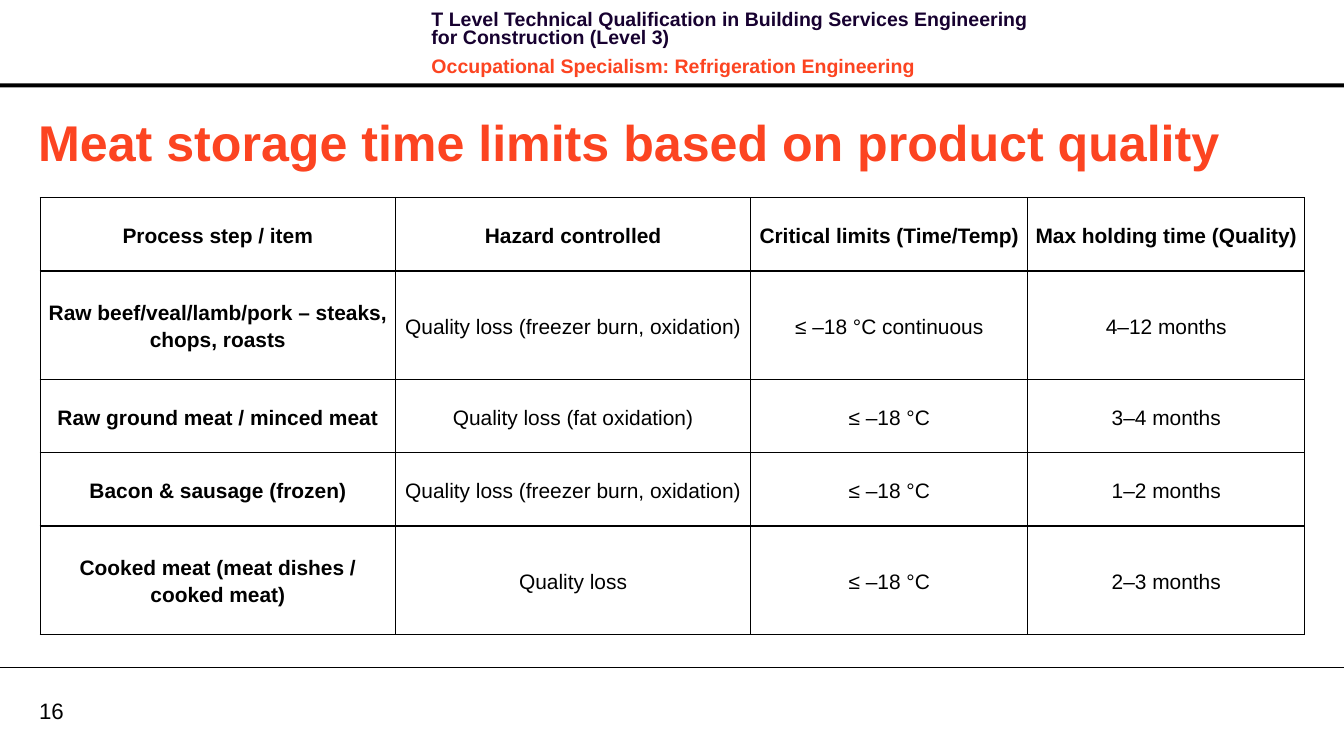
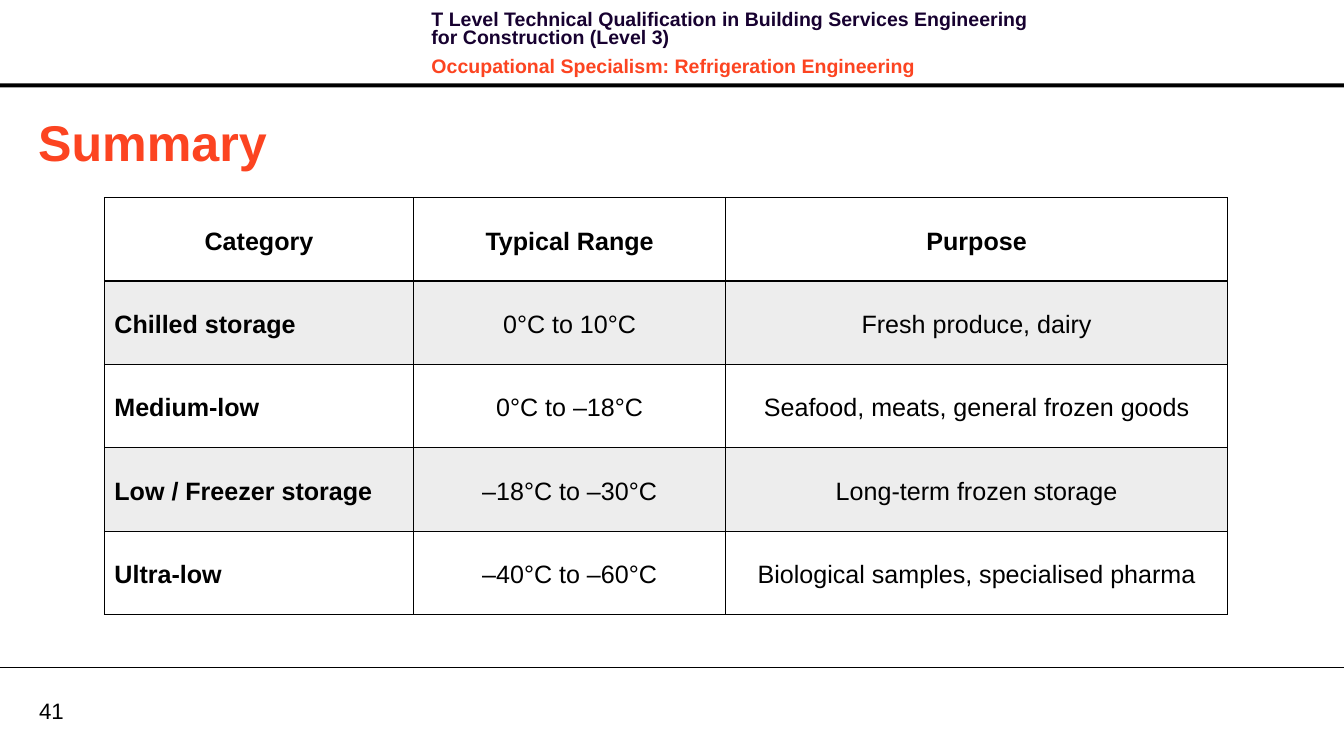
from dataclasses import dataclass

from lxml.etree import SubElement
from pptx import Presentation
from pptx.dml.color import RGBColor
from pptx.enum.shapes import MSO_CONNECTOR, MSO_SHAPE
from pptx.enum.text import MSO_ANCHOR as ANCHOR, MSO_AUTO_SIZE as FIT, PP_ALIGN as ALIGN
from pptx.oxml.ns import qn
from pptx.slide import Slide
from pptx.table import _Cell as Cell
from pptx.text.text import _Paragraph as Paragraph
from pptx.util import Emu, Pt

PX = 9144
WIDTH, HEIGHT = 1339, 748
FONT = "Arial"
BLACK = RGBColor(0x00, 0x00, 0x00)
WHITE = RGBColor(0xFF, 0xFF, 0xFF)
NAVY = RGBColor(0x17, 0x01, 0x30)
ORANGE = RGBColor(0xFC, 0x44, 0x21)
GREY = RGBColor(0xA6, 0xA6, 0xA6)
GREY_ALPHA = 20

HEADER = (
    ("T Level Technical Qualification in Building Services Engineering for Construction (Level 3)", NAVY),
    ("Occupational Specialism: Refrigeration Engineering", ORANGE),
)


@dataclass(frozen=True)
class TableSlide:
    title: str
    number: int
    left: int
    cols: tuple[int, ...]
    row_heights: tuple[int, ...]
    size: int
    rows: tuple[tuple[str, ...], ...]
    banded: bool = False


SLIDES = (
    TableSlide(
        "Meat storage time limits based on product quality", 16, 40,
        (354, 354, 276, 276), (73, 108, 73, 73, 108), 15,
        (
            ("Process step / item", "Hazard controlled",
             "Critical limits (Time/Temp)", "Max holding time (Quality)"),
            ("Raw beef/veal/lamb/pork – steaks, chops, roasts",
             "Quality loss (freezer burn, oxidation)", "≤ –18 °C continuous", "4–12 months"),
            ("Raw ground meat / minced meat", "Quality loss (fat oxidation)", "≤ –18 °C", "3–4 months"),
            ("Bacon & sausage (frozen)", "Quality loss (freezer burn, oxidation)", "≤ –18 °C", "1–2 months"),
            ("Cooked meat (meat dishes / cooked meat)", "Quality loss", "≤ –18 °C", "2–3 months"),
        ),
    ),
    TableSlide(
        "Summary", 41, 104, (308, 311, 500), (83,) * 5, 18,
        (
            ("Category", "Typical Range", "Purpose"),
            ("Chilled storage", "0°C to 10°C", "Fresh produce, dairy"),
            ("Medium‑low", "0°C to –18°C", "Seafood, meats, general frozen goods"),
            ("Low / Freezer storage", "–18°C to –30°C", "Long‑term frozen storage"),
            ("Ultra‑low", "–40°C to –60°C", "Biological samples, specialised pharma"),
        ),
        banded=True,
    ),
)


def px(*lengths: int) -> list[Emu]:
    return [Emu(n * PX) for n in lengths]


def add_run(p: Paragraph, text: str, size: int, color: RGBColor = BLACK, bold: bool = False) -> None:
    r = p.add_run()
    r.text = text
    r.font.name, r.font.size, r.font.bold = FONT, Pt(size), bold
    r.font.color.rgb = color


def add_frame(slide: Slide, number: int) -> None:
    band = slide.shapes.add_shape(MSO_SHAPE.RECTANGLE, *px(0, 83, WIDTH, 4))
    band.shadow.inherit = False
    band.fill.solid()
    band.fill.fore_color.rgb = BLACK
    band.line.fill.background()

    tf = slide.shapes.add_textbox(*px(420, 7, 639, 64)).text_frame
    tf.word_wrap = True
    for i, (text, color) in enumerate(HEADER):
        p = tf.add_paragraph() if i else tf.paragraphs[0]
        p.line_spacing, p.space_after = Pt(13.1), Pt(4)
        if i:
            p.space_before = Pt(4)
        add_run(p, text, 14, color, True)

    tf = slide.shapes.add_textbox(*px(39, 694, 64, 27)).text_frame
    tf.word_wrap = True
    tf.vertical_anchor = ANCHOR.MIDDLE
    tf.margin_left = tf.margin_top = tf.margin_right = tf.margin_bottom = 0
    add_run(tf.paragraphs[0], str(number), 16)

    rule = slide.shapes.add_connector(MSO_CONNECTOR.STRAIGHT, *px(0, 665, WIDTH, 665))
    rule.line.color.rgb = BLACK
    rule.line.width = Pt(0.75)
    SubElement(rule._element.spPr, qn("a:effectLst"))


def set_title(slide: Slide, text: str) -> None:
    sp = slide.shapes.title
    sp.left, sp.top, sp.width, sp.height = px(28, 105, 1272, 71)
    tf = sp.text_frame
    tf.word_wrap = True
    tf.auto_size = FIT.SHAPE_TO_FIT_TEXT
    tf.vertical_anchor = ANCHOR.MIDDLE
    p = tf.paragraphs[0]
    p.alignment = ALIGN.LEFT
    add_run(p, text, 36, ORANGE, True)


def set_borders(cell: Cell, top: int, bottom: int) -> None:
    tc_pr = cell._tc.get_or_add_tcPr()
    for side, width in (("L", 1), ("R", 1), ("T", top), ("B", bottom)):
        ln = SubElement(tc_pr, qn(f"a:ln{side}"), w=str(Pt(width)))
        fill = SubElement(ln, qn("a:solidFill"))
        SubElement(fill, qn("a:srgbClr"), val=str(BLACK))


def set_fill(cell: Cell, color: RGBColor, alpha: int = 100) -> None:
    cell.fill.solid()
    cell.fill.fore_color.rgb = color
    if alpha < 100:
        clr = cell._tc.tcPr.find(f"{qn('a:solidFill')}/{qn('a:srgbClr')}")
        SubElement(clr, qn("a:alpha"), val=str(alpha * 1000))


def add_table(slide: Slide, spec: TableSlide) -> None:
    table = slide.shapes.add_table(
        len(spec.rows), len(spec.cols),
        *px(spec.left, 197, sum(spec.cols), sum(spec.row_heights)),
    ).table
    table.first_row = table.horz_banding = False
    for col, width in zip(table.columns, px(*spec.cols)):
        col.width = width
    for row, height in zip(table.rows, px(*spec.row_heights)):
        row.height = height
    for i, texts in enumerate(spec.rows):
        for j, text in enumerate(texts):
            cell = table.cell(i, j)
            label = spec.banded and i > 0 and j == 0
            set_borders(cell, 2 if spec.banded and i == 1 else 1, 2 if spec.banded and i == 0 else 1)
            if spec.banded and i % 2:
                set_fill(cell, GREY, GREY_ALPHA)
            else:
                set_fill(cell, WHITE)
            cell.vertical_anchor = ANCHOR.MIDDLE
            cell.margin_left, cell.margin_right = px(10, 10) if label else px(1, 1)
            cell.margin_top, cell.margin_bottom = px(5, 5) if label else px(1, 1)
            p = cell.text_frame.paragraphs[0]
            p.alignment = ALIGN.LEFT if label else ALIGN.CENTER
            p.line_spacing, p.space_after = 1.15, Pt(8)
            add_run(p, text, spec.size, bold=i == 0 or j == 0)


def main() -> None:
    prs = Presentation()
    prs.slide_width, prs.slide_height = px(WIDTH, HEIGHT)
    for spec in SLIDES:
        slide = prs.slides.add_slide(prs.slide_layouts[5])
        add_frame(slide, spec.number)
        set_title(slide, spec.title)
        add_table(slide, spec)
    prs.save("out.pptx")


if __name__ == "__main__":
    main()
